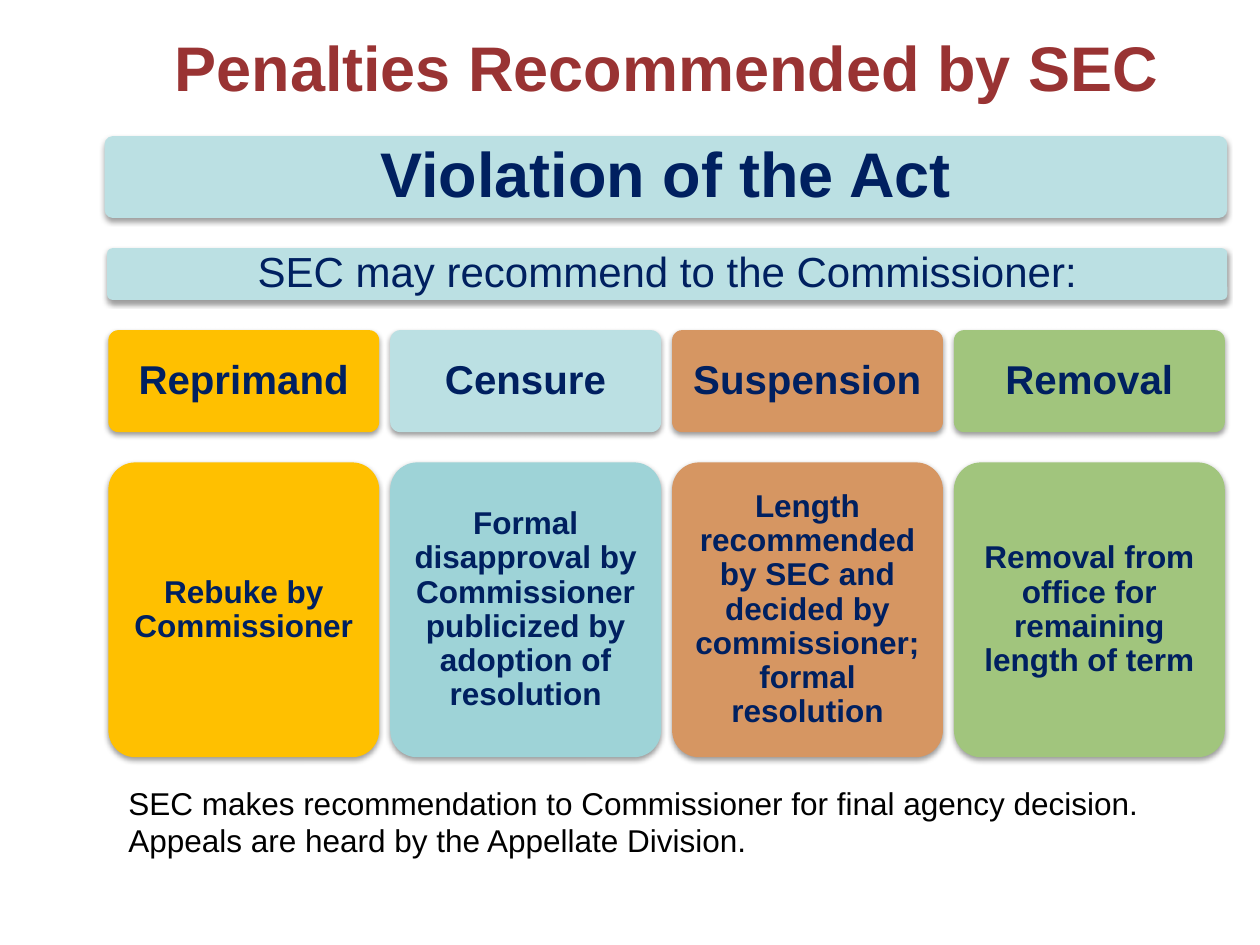
from dataclasses import dataclass

from lxml.etree import SubElement
from pptx import Presentation
from pptx.dml.color import RGBColor
from pptx.enum.shapes import MSO_SHAPE
from pptx.enum.text import MSO_ANCHOR, PP_ALIGN
from pptx.oxml.ns import qn
from pptx.util import Inches, Pt

TITLE = "Penalties Recommended by SEC"
VIOLATION = "Violation of the Act"
RECOMMENDATION = "SEC may recommend to the Commissioner:"
PENALTIES = [
    ("Reprimand", "Rebuke by Commissioner", "FFC000", "FFC000"),
    ("Censure",
     "Formal disapproval by Commissioner publicized by adoption of resolution",
     "BBE0E3", "9ED3D7"),
    ("Suspension",
     "Length recommended by SEC and decided by commissioner; formal resolution",
     "D69662", "D69662"),
    ("Removal", "Removal from office for remaining length of term",
     "A1C57D", "A1C57D"),
]
APPEALS = ("SEC makes recommendation to Commissioner for final agency decision. "
           "Appeals are heard by the Appellate Division.")


@dataclass(frozen=True)
class Theme:
    font: str = "Arial"
    title: str = "993333"
    text: str = "002060"
    note: str = "000000"
    banner: str = "BBE0E3"
    shadow: str = "000000"
    heading_size: float = 36
    lead_size: float = 24
    penalty_size: float = 23
    body_size: float = 18


THEME = Theme()
COLUMN_LEFT, COLUMN_WIDTH, COLUMN_STEP = 0.86, 2.15, 2.237


def write(frame, words, size, color, bold=False, align=PP_ALIGN.CENTER,
          anchor=MSO_ANCHOR.MIDDLE):
    frame.word_wrap = True
    frame.vertical_anchor = anchor
    paragraph = frame.paragraphs[0]
    paragraph.alignment = align
    run = paragraph.add_run()
    run.text = words
    run.font.name = THEME.font
    run.font.size = Pt(size)
    run.font.bold = bold
    run.font.color.rgb = RGBColor.from_string(color)
    return paragraph


def add_label(slide, place, words, size, color, **style):
    label = slide.shapes.add_textbox(*map(Inches, place))
    write(label.text_frame, words, size, color, **style)


def add_shadow(card):
    card.shadow.inherit = False
    effects = card._element.spPr.find(qn("a:effectLst"))
    shadow = SubElement(effects, qn("a:outerShdw"), blurRad=str(Pt(3.1)),
                        dist=str(Pt(1.6)), dir="5400000", rotWithShape="0")
    color = SubElement(shadow, qn("a:srgbClr"), val=THEME.shadow)
    SubElement(color, qn("a:alpha"), val="38000")


def add_card(slide, place, words, size, fill, inset, bold=True):
    card = slide.shapes.add_shape(MSO_SHAPE.ROUNDED_RECTANGLE, *map(Inches, place))
    card.adjustments[0] = 0.1
    card.fill.solid()
    card.fill.fore_color.rgb = RGBColor.from_string(fill)
    card.line.fill.background()
    add_shadow(card)
    frame = card.text_frame
    frame.margin_left = frame.margin_right = Inches(inset)
    frame.margin_top = frame.margin_bottom = 0
    write(frame, words, size, THEME.text, bold).line_spacing = 0.9


def main():
    deck = Presentation()
    deck.slide_width, deck.slide_height = Inches(10), Inches(7.5)
    slide = deck.slides.add_slide(deck.slide_layouts[6])

    add_label(slide, (1.08, 0.17, 8.42, 0.71), TITLE, THEME.heading_size,
              THEME.title, bold=True)
    add_label(slide, (0.92, 6.17, 8.75, 0.71), APPEALS, THEME.body_size,
              THEME.note, align=PP_ALIGN.LEFT, anchor=MSO_ANCHOR.TOP)

    add_card(slide, (0.83, 1.08, 8.91, 0.65), VIOLATION, THEME.heading_size,
             THEME.banner, 0.15)
    add_card(slide, (0.85, 1.97, 8.89, 0.41), RECOMMENDATION, THEME.lead_size,
             THEME.banner, 0.1, bold=False)

    for column, (penalty, meaning, penalty_fill, meaning_fill) in enumerate(PENALTIES):
        left = COLUMN_LEFT + column * COLUMN_STEP
        add_card(slide, (left, 2.62, COLUMN_WIDTH, 0.81), penalty,
                 THEME.penalty_size, penalty_fill, 0.1)
        add_card(slide, (left, 3.67, COLUMN_WIDTH, 2.34), meaning,
                 THEME.body_size, meaning_fill, 0.07)

    deck.save("out.pptx")


if __name__ == "__main__":
    main()
